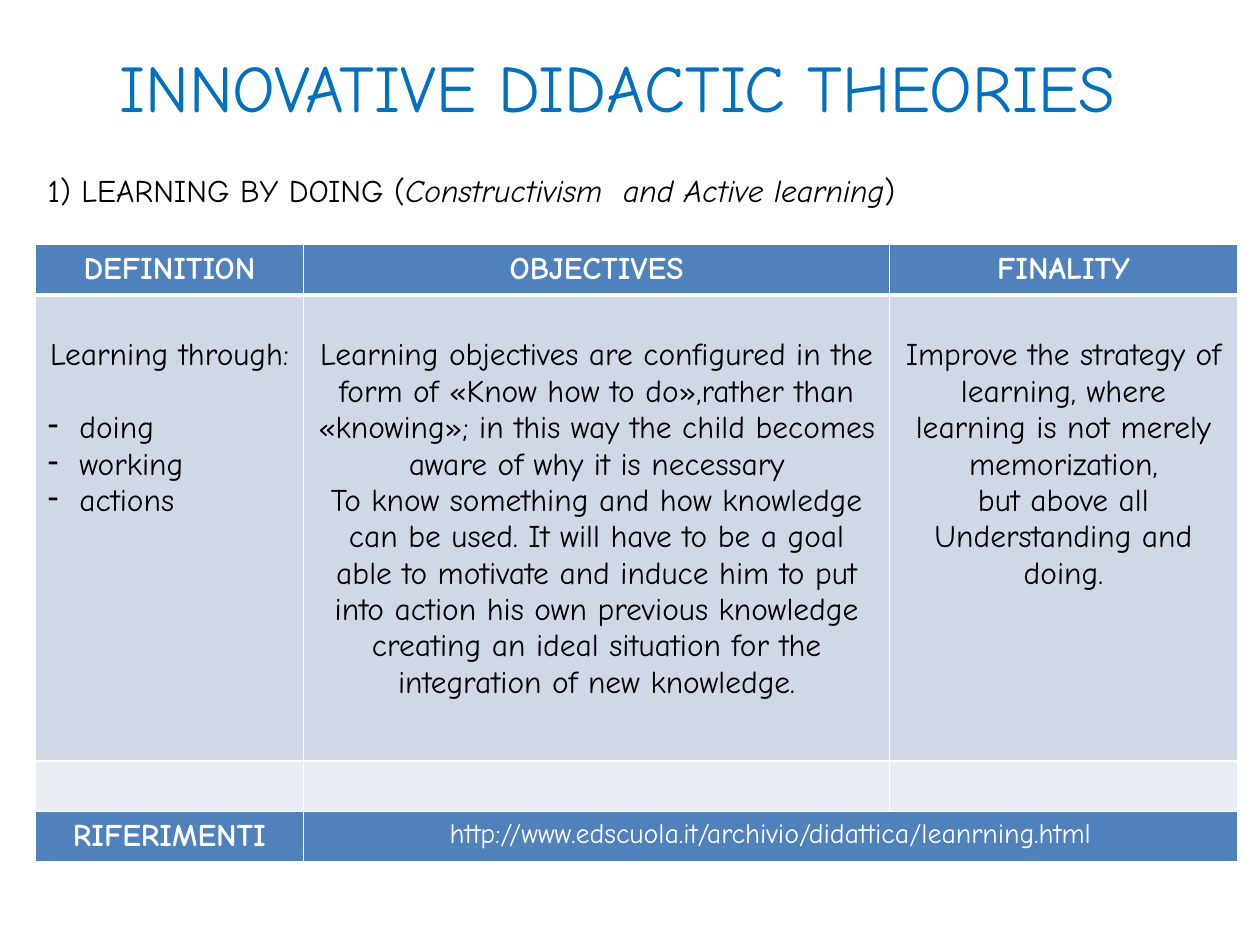
from dataclasses import dataclass
from typing import Any

from pptx import Presentation
from pptx.dml.color import RGBColor
from pptx.enum.text import MSO_ANCHOR, MSO_AUTO_SIZE, PP_ALIGN as Align
from pptx.oxml.ns import qn
from pptx.util import Inches, Pt
from lxml.etree import SubElement

LEFT, WIDTH = 0.28, 9.54
COLUMN_WIDTHS = [2.13, 4.65, 2.76]
ROW_HEIGHTS = [0.4, 3.7, 0.4, 0.4]
LINE_HEIGHT = 20.8  # points, one line of body text
HEADINGS = ["DEFINITION", "OBJECTIVES", "FINALITY"]
DEFINITION_ITEMS = ["doing", "working", "actions"]
OBJECTIVES = [
    "Learning objectives are configured in the form of «Know how to do»,rather than "
    "«knowing»; in this way the child becomes aware of why it is necessary",
    "To know something and how knowledge can be used. It will have to be a goal able to "
    "motivate and induce him to put into action his own previous knowledge creating an "
    "ideal situation for the integration of new knowledge.",
]
FINALITY = [
    "Improve the strategy of learning, where learning is not merely memorization,",
    "but above all",
    "Understanding and doing.",
]
REFERENCE = "http://www.edscuola.it/archivio/didattica/leanrning.html"


def rgb(value):
    return RGBColor.from_string(value)


def add_dash(paragraph):
    properties = paragraph._p.get_or_add_pPr()
    properties.set("marL", str(Inches(0.25)))
    properties.set("indent", str(-Inches(0.25)))
    SubElement(properties, qn("a:buChar"), char="-")


def write(frame, text, *, first=True, align=Align.CENTER, size=18, color="000000",
          bold=False, font="Comic Neue", dash=False, space_before=0):
    """Add a paragraph; text is a string or a list of (text, italic) pairs."""
    paragraph = frame.paragraphs[0] if first else frame.add_paragraph()
    paragraph.alignment = align
    if space_before:
        paragraph.space_before = Pt(space_before)
    if dash:
        add_dash(paragraph)
    for part, italic in [(text, False)] if isinstance(text, str) else text:
        run = paragraph.add_run()
        run.text = part
        run.font.name = font
        run.font.size = Pt(size)
        run.font.bold = bold
        run.font.italic = italic
        run.font.color.rgb = rgb(color)


def add_borders(cell, top=1, bottom=1, color="FFFFFF"):
    properties = cell._tc.get_or_add_tcPr()
    for side, width in {"L": 1, "R": 1, "T": top, "B": bottom}.items():
        line = SubElement(properties, qn(f"a:ln{side}"), w=str(Pt(width)))
        fill = SubElement(line, qn("a:solidFill"))
        SubElement(fill, qn("a:srgbClr"), val=color)


@dataclass
class TheorySlide:
    slide: Any
    accent: str = "4F81BD"
    band: str = "D0D8E8"
    light_band: str = "E9EDF4"
    title_color: str = "0070C0"

    def title(self, text):
        title = self.slide.shapes.title
        title.left, title.top = Inches(0), Inches(0.3)
        title.width, title.height = Inches(9.8), Inches(0.77)
        title.text_frame.vertical_anchor = MSO_ANCHOR.MIDDLE
        title.text_frame.auto_size = MSO_AUTO_SIZE.NONE
        write(title.text_frame, text, size=38, color=self.title_color)

    def subtitle(self, parts):
        box = self.slide.shapes.add_textbox(
            Inches(LEFT), Inches(1.31), Inches(WIDTH), Inches(0.4))
        box.text_frame.word_wrap = True
        write(box.text_frame, parts, align=Align.JUSTIFY)

    def table(self):
        """Add the empty table with its fills and borders."""
        table = self.slide.shapes.add_table(
            len(ROW_HEIGHTS), len(COLUMN_WIDTHS), Inches(LEFT), Inches(1.94),
            Inches(WIDTH), Inches(sum(ROW_HEIGHTS))).table
        table.first_row = table.horz_banding = False
        for column, width in zip(table.columns, COLUMN_WIDTHS):
            column.width = Inches(width)
        fills = [self.accent, self.band, self.light_band, self.accent]
        for index, (row, height) in enumerate(zip(table.rows, ROW_HEIGHTS)):
            row.height = Inches(height)
            for cell in row.cells:
                add_borders(cell, top=3 if index == 1 else 1, bottom=3 if index == 0 else 1)
                cell.fill.solid()
                cell.fill.fore_color.rgb = rgb(fills[index])
        table.cell(3, 1).merge(table.cell(3, 2))
        return table

    def body_cell(self, cell, paragraphs):
        """Fill a cell, starting one line below its top."""
        cell.margin_top = Inches(0.05) + Pt(LINE_HEIGHT)
        for index, text in enumerate(paragraphs):
            write(cell.text_frame, text, first=index == 0)


def main():
    presentation = Presentation()
    presentation.slide_width, presentation.slide_height = Inches(10), Inches(7.5)
    theory = TheorySlide(presentation.slides.add_slide(presentation.slide_layouts[5]))

    theory.title("INNOVATIVE DIDACTIC THEORIES")
    theory.subtitle([("1) LEARNING BY DOING (", False),
                     ("Constructivism  and Active learning", True), (")", False)])

    table = theory.table()
    for column, heading in enumerate(HEADINGS):
        write(table.cell(0, column).text_frame, heading, color="FFFFFF", bold=True)

    bodies = [["Learning through:"], OBJECTIVES, FINALITY]
    for column, paragraphs in enumerate(bodies):
        theory.body_cell(table.cell(1, column), paragraphs)
    for index, item in enumerate(DEFINITION_ITEMS):
        write(table.cell(1, 0).text_frame, item, first=False, align=Align.JUSTIFY,
              dash=True, space_before=LINE_HEIGHT if index == 0 else 0)

    write(table.cell(3, 0).text_frame, "RIFERIMENTI", color="FFFFFF", bold=True)
    write(table.cell(3, 1).text_frame, REFERENCE, size=16, color="FFFFFF")

    presentation.save("out.pptx")


if __name__ == "__main__":
    main()
